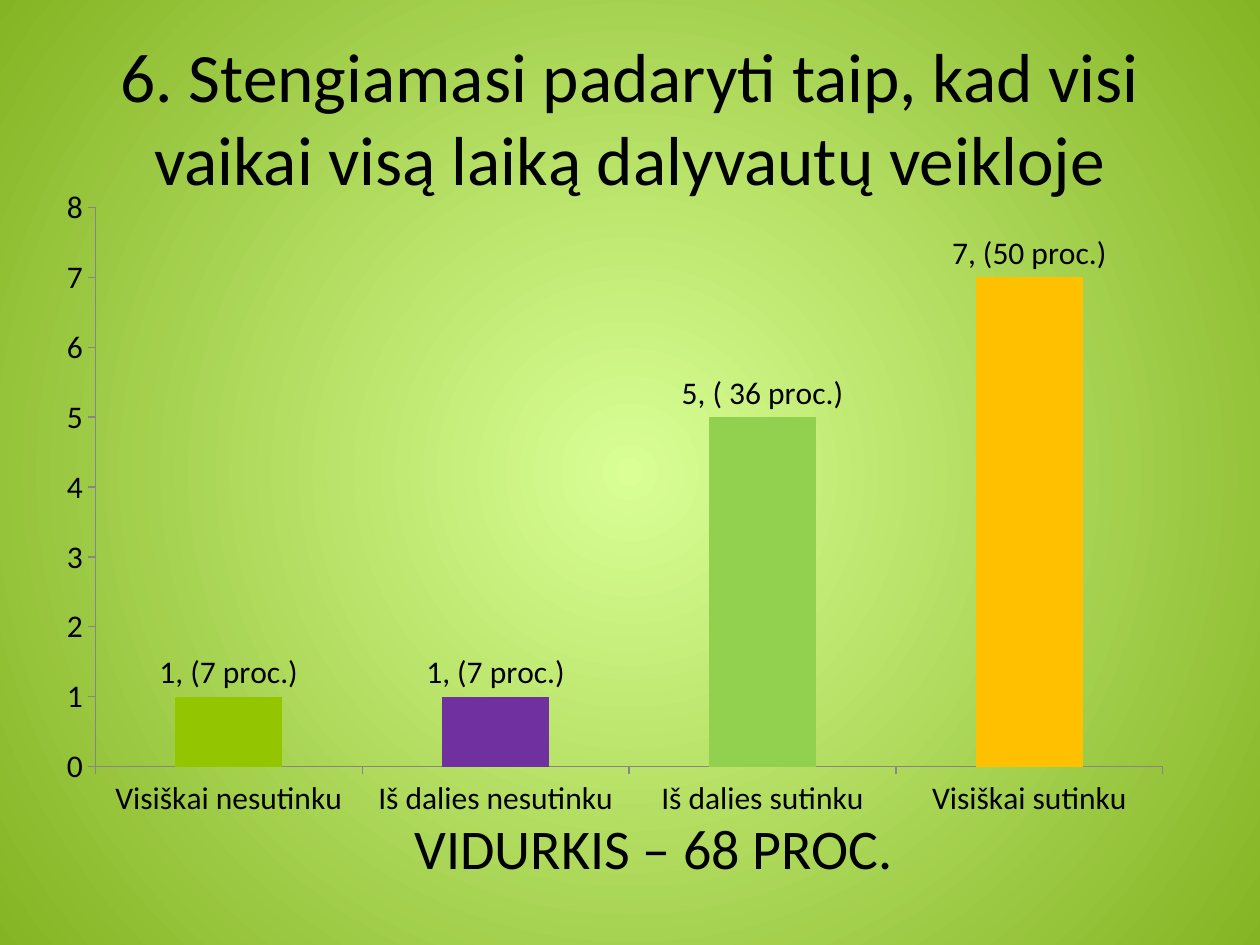
from lxml.etree import SubElement
from pptx import Presentation
from pptx.chart.data import CategoryChartData
from pptx.dml.color import RGBColor
from pptx.enum.chart import XL_CHART_TYPE, XL_LABEL_POSITION, XL_TICK_MARK
from pptx.enum.text import MSO_ANCHOR, PP_ALIGN
from pptx.oxml.ns import qn
from pptx.util import Inches, Pt

BLACK = RGBColor(0x00, 0x00, 0x00)
GREY = RGBColor(0x86, 0x86, 0x86)
PALE_GREEN = RGBColor(0xD9, 0xFF, 0x95)
DARK_GREEN = RGBColor(0x84, 0xB4, 0x23)
LIME = RGBColor(0x94, 0xC6, 0x00)
PURPLE = RGBColor(0x70, 0x30, 0xA0)
GREEN = RGBColor(0x92, 0xD0, 0x50)
AMBER = RGBColor(0xFF, 0xC0, 0x00)
FONT = "Calibri"

ANSWERS = [
    ("Visiškai nesutinku", 1, "1, (7 proc.)", LIME),
    ("Iš dalies nesutinku", 1, "1, (7 proc.)", PURPLE),
    ("Iš dalies sutinku", 5, "5, ( 36 proc.)", GREEN),
    ("Visiškai sutinku", 7, "7, (50 proc.)", AMBER),
]


def set_font(font, size):
    for name, value in {"name": FONT, "size": Pt(size), "bold": False}.items():
        setattr(font, name, value)
    font.color.rgb = BLACK


def add_text(slide, text, left, top, width, height, size):
    box = slide.shapes.add_textbox(Inches(left), Inches(top), Inches(width), Inches(height))
    frame = box.text_frame
    frame.word_wrap = True
    frame.vertical_anchor = MSO_ANCHOR.MIDDLE
    paragraph = frame.paragraphs[0]
    paragraph.alignment = PP_ALIGN.CENTER
    run = paragraph.add_run()
    run.text = text
    set_font(run.font, size)


presentation = Presentation()
presentation.slide_width = Inches(10)
presentation.slide_height = Inches(7.5)
slide = presentation.slides.add_slide(presentation.slide_layouts[6])

# Radial background, from the centre outwards
background = slide.background.fill
background.gradient()
for stop, color in zip(background.gradient_stops, (PALE_GREEN, DARK_GREEN)):
    stop.color.rgb = color
gradient = slide.element.find(".//" + qn("a:gradFill"))
gradient.remove(gradient.find(qn("a:lin")))
circle = SubElement(gradient, qn("a:path"), path="circle")
SubElement(circle, qn("a:fillToRect"), l="50000", t="50000", r="50000", b="50000")

add_text(slide, "6. Stengiamasi padaryti taip, kad visi vaikai visą laiką dalyvautų veikloje",
         0.5, 0.3, 9, 1.25, 39.6)

# Answer chart
chart_data = CategoryChartData()
chart_data.categories = [answer[0] for answer in ANSWERS]
chart_data.add_series("Series 1", [answer[1] for answer in ANSWERS])
chart = slide.shapes.add_chart(XL_CHART_TYPE.COLUMN_CLUSTERED, Inches(0.35), Inches(1.39),
                               Inches(9.06), Inches(5.2), chart_data).chart
chart.has_legend = False
chart.has_title = False
set_font(chart.font, 18)
for axis in (chart.category_axis, chart.value_axis):
    axis.has_major_gridlines = False
    axis.major_tick_mark = XL_TICK_MARK.OUTSIDE
    axis.format.line.color.rgb = GREY
    axis.format.line.width = Pt(0.75)

plot = chart.plots[0]
plot.gap_width = 150
plot.vary_by_categories = False
series = plot.series[0]
series.format.fill.solid()
series.format.fill.fore_color.rgb = LIME
series.data_labels.show_value = True
for index, (_, _, label, color) in enumerate(ANSWERS):
    point = series.points[index]
    point.format.fill.solid()
    point.format.fill.fore_color.rgb = color
    point.data_label.position = XL_LABEL_POSITION.OUTSIDE_END
    run = point.data_label.text_frame.paragraphs[0].add_run()
    run.text = label
    set_font(run.font, 18)

add_text(slide, "VIDURKIS – 68 PROC.", 0.9, 6.4, 8.58, 0.64, 32)

presentation.save("out.pptx")
